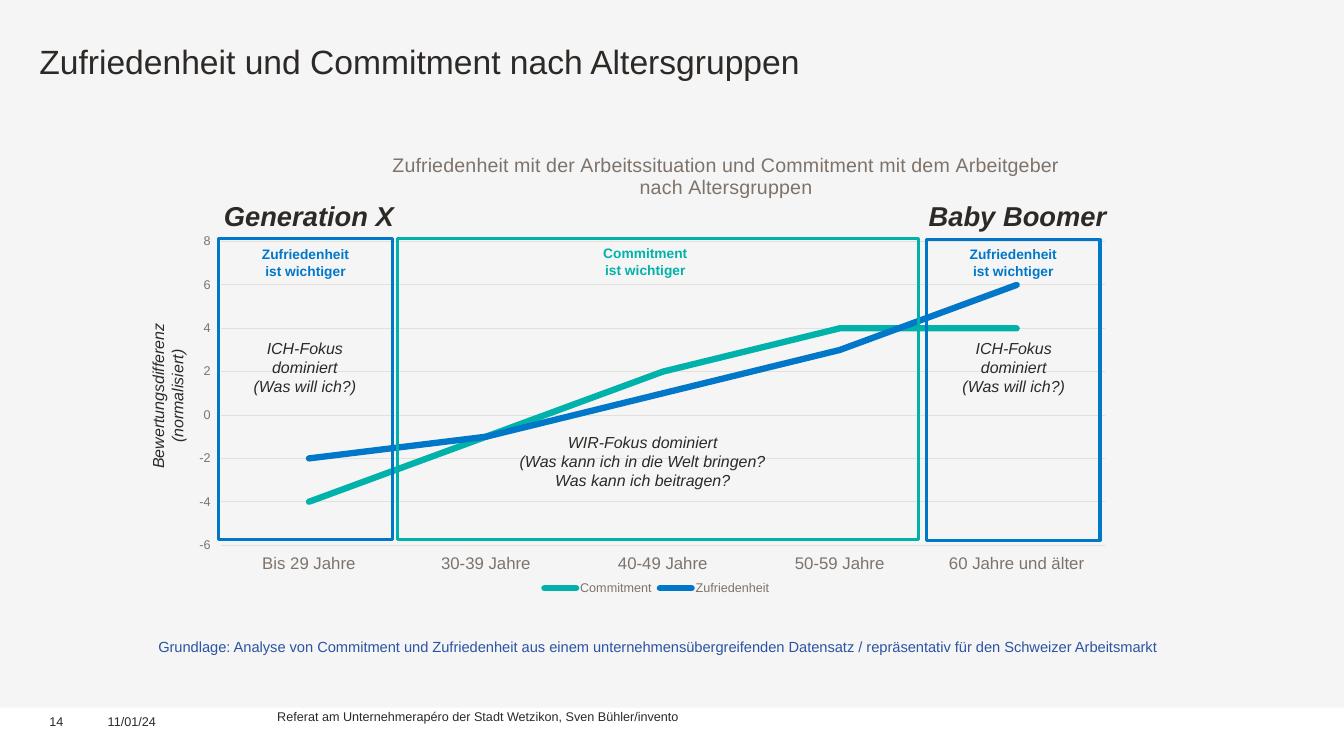
"""Build the slide on satisfaction and commitment by age group."""
from lxml import etree
from pptx import Presentation
from pptx.chart.data import CategoryChartData
from pptx.dml.color import RGBColor
from pptx.enum import chart as kinds, shapes, text
from pptx.oxml import ns
from pptx.util import Inches, Pt

INK = RGBColor(0x2D, 0x29, 0x26)
BLUE = RGBColor(0x00, 0x77, 0xC8)
TEAL = RGBColor(0x00, 0xB2, 0xA9)
NAVY = RGBColor(0x2B, 0x54, 0xA2)
TAUPE = RGBColor(0x7E, 0x73, 0x6A)
GRID = RGBColor(0xE2, 0xDF, 0xDC)
PALE = RGBColor(0xF5, 0xF5, 0xF5)
WHITE = RGBColor(0xFF, 0xFF, 0xFF)

TITLE = "Zufriedenheit und Commitment nach Altersgruppen"
CHART_TITLE = ["Zufriedenheit mit der Arbeitssituation und Commitment mit dem Arbeitgeber",
               "nach Altersgruppen"]
AGES = ["Bis 29 Jahre", "30-39 Jahre", "40-49 Jahre", "50-59 Jahre", "60 Jahre und älter"]
SERIES = [("Commitment", (-4, -1, 2, 4, 4), TEAL),
          ("Zufriedenheit", (-2, -1, 1, 3, 6), BLUE)]
SOURCE = ("Grundlage: Analyse von Commitment und Zufriedenheit aus einem unternehmensübergreifenden "
          "Datensatz / repräsentativ für den Schweizer Arbeitsmarkt")
ME_FOCUS = ["ICH-Fokus", "dominiert", "(Was will ich?)"]
WE_FOCUS = ["WIR-Fokus dominiert", "(Was kann ich in die Welt bringen?", "Was kann ich beitragen?"]
AXIS_LABEL = ["Bewertungsdifferenz", "(normalisiert)"]

FRAMES = [(2.17, 2.37, 1.72, BLUE), (9.19, 2.38, 1.72, BLUE), (3.94, 2.37, 5.17, TEAL)]
FRAME_HEIGHT = 2.98

HEADING = {"size": Pt(19.5), "bold": True, "italic": True}
FOCUS = {"size": Pt(11.4), "italic": True}
SMALL = {"size": Pt(9)}
KEY_BLUE = {"size": Pt(9.8), "bold": True, "color": BLUE}
KEY_TEAL = {**KEY_BLUE, "color": TEAL}
CENTER, LEFT = text.PP_ALIGN.CENTER, text.PP_ALIGN.LEFT

LABELS = [
    ((1.57, 6.33, 10.03, 0.18), [SOURCE], {"size": Pt(10.5), "color": NAVY}, LEFT, False),
    ((2.17, 2.44, 1.72, 0.33), ["Zufriedenheit", "ist wichtiger"], KEY_BLUE, CENTER, True),
    ((9.19, 2.44, 1.72, 0.33), ["Zufriedenheit", "ist wichtiger"], KEY_BLUE, CENTER, True),
    ((5.54, 2.43, 1.72, 0.33), ["Commitment", "ist wichtiger"], KEY_TEAL, CENTER, True),
    ((2.22, 1.98, 1.7, 0.33), ["Generation X"], HEADING, LEFT, False),
    ((9.21, 1.98, 1.78, 0.33), ["Baby Boomer"], HEADING, LEFT, False),
    ((2.51, 3.36, 1.03, 0.57), ME_FOCUS, FOCUS, CENTER, False),
    ((9.54, 3.36, 1.03, 0.57), ME_FOCUS, FOCUS, CENTER, False),
    ((5.14, 4.29, 2.47, 0.57), WE_FOCUS, FOCUS, CENTER, False),
    ((2.75, 7.03, 7.77, 0.38),
     ["Referat am Unternehmerapéro der Stadt Wetzikon, Sven Bühler/invento"], SMALL, LEFT, True),
]
FOOTER_FIELDS = [((0.97, 7.03, 1.15, 0.38), "11/01/24"), ((0.39, 7.03, 0.49, 0.38), "14")]


def format_font(font, values):
    """Apply a dict of font values, with Arial and ink as defaults."""
    for name, value in {"name": "Arial", "color": INK, **values}.items():
        if name == "color":
            font.color.rgb = value
        else:
            setattr(font, name, value)


def write(frame, lines, values, align=LEFT, wrap=True, inset=(0, 0)):
    """Fill a text frame with one paragraph per line."""
    across, down = (Inches(side) for side in inset)
    for name, value in {"word_wrap": wrap, "margin_left": across, "margin_right": across,
                        "margin_top": down, "margin_bottom": down,
                        "vertical_anchor": text.MSO_ANCHOR.TOP}.items():
        setattr(frame, name, value)
    for index, line in enumerate(lines):
        para = frame.add_paragraph() if index else frame.paragraphs[0]
        para.alignment = align
        span = para.add_run()
        span.text = line
        format_font(span.font, values)


def add_label(page, place, lines, values, align=LEFT, wrap=True, inset=(0, 0)):
    """Add a text box and return it."""
    box = page.shapes.add_textbox(*map(Inches, place))
    write(box.text_frame, lines, values, align, wrap, inset)
    return box


def add_box(page, place, fill=None, line=None):
    """Add a rectangle with an optional fill and outline."""
    box = page.shapes.add_shape(shapes.MSO_SHAPE.RECTANGLE, *map(Inches, place))
    box.shadow.inherit = False
    if fill is None:
        box.fill.background()
    else:
        box.fill.solid()
        box.fill.fore_color.rgb = fill
    if line is None:
        box.line.fill.background()
    else:
        box.line.color.rgb = line
        box.line.width = Pt(2.25)


def set_layout(element, index, values):
    """Give a chart part a manual layout."""
    for old in element.findall(ns.qn("c:layout")):
        element.remove(old)
    layout = etree.Element(ns.qn("c:layout"))
    manual = etree.SubElement(layout, ns.qn("c:manualLayout"))
    for name, value in values.items():
        etree.SubElement(manual, ns.qn(f"c:{name}")).set("val", str(value))
    element.insert(index, layout)


def add_age_chart(page):
    """Add the line chart of both ratings by age group."""
    data = CategoryChartData()
    data.categories = AGES
    for name, values, _ in SERIES:
        data.add_series(name, values)
    place = map(Inches, (1.94, 1.25, 9.15, 4.7))
    chart = page.shapes.add_chart(kinds.XL_CHART_TYPE.LINE, *place, data).chart
    format_font(chart.font, {"size": Pt(10)})

    write(chart.chart_title.text_frame, CHART_TITLE,
          {"size": Pt(14), "bold": False, "color": TAUPE}, CENTER)
    edges = {"xMode": "edge", "yMode": "edge"}
    set_layout(chart.chart_title._element, 1, {**edges, "x": 0.21, "y": 0.05})
    set_layout(chart._chartSpace.chart.plotArea, 0,
               {"layoutTarget": "inner", **edges, "x": 0.027, "y": 0.244, "w": 0.959, "h": 0.641})

    chart.has_legend = True
    chart.legend.position = kinds.XL_LEGEND_POSITION.BOTTOM
    chart.legend.include_in_layout = False
    format_font(chart.legend.font, {"size": Pt(9), "color": TAUPE})

    for axis, size in ((chart.category_axis, 12), (chart.value_axis, 9)):
        axis.major_tick_mark = axis.minor_tick_mark = kinds.XL_TICK_MARK.NONE
        axis.tick_label_position = kinds.XL_TICK_LABEL_POSITION.LOW
        format_font(axis.tick_labels.font, {"size": Pt(size), "color": TAUPE})
    scale = chart.value_axis
    scale.minimum_scale, scale.maximum_scale, scale.major_unit = -6, 8, 2
    scale.format.line.fill.background()
    for line in (chart.category_axis.format.line, scale.major_gridlines.format.line):
        line.color.rgb = GRID
        line.width = Pt(0.75)

    plot = chart.plots[0]
    plot.vary_by_categories = False
    for series, (_, _, color) in zip(plot.series, SERIES):
        series.smooth = False
        series.marker.style = kinds.XL_MARKER_STYLE.NONE
        series.format.line.color.rgb = color
        series.format.line.width = Pt(4.5)
        series.format.line._get_or_add_ln().set("cap", "rnd")


def main():
    """Build and save the deck."""
    deck = Presentation()
    deck.slide_width, deck.slide_height = Inches(13.33), Inches(7.5)
    page = deck.slides.add_slide(deck.slide_layouts[5])
    page.background.fill.solid()
    page.background.fill.fore_color.rgb = PALE
    add_box(page, (0, 7.02, 13.33, 0.48), fill=WHITE)

    title = page.shapes.title
    title.left, title.top, title.width, title.height = map(Inches, (0.39, 0.45, 12.55, 0.36))
    write(title.text_frame, [TITLE], {"size": Pt(24)})
    title.text_frame.paragraphs[0].line_spacing = 0.9

    add_age_chart(page)
    for left, top, width, color in FRAMES:
        add_box(page, (left, top, width, FRAME_HEIGHT), line=color)
    for label in LABELS:
        add_label(page, *label)
    for place, words in FOOTER_FIELDS:
        add_label(page, place, [words], SMALL, inset=(0.1, 0.05))
    axis_label = add_label(page, (0.93, 3.74, 1.46, 0.38), AXIS_LABEL, FOCUS, CENTER, False)
    axis_label.rotation = 270
    deck.save("out.pptx")


if __name__ == "__main__":
    main()
